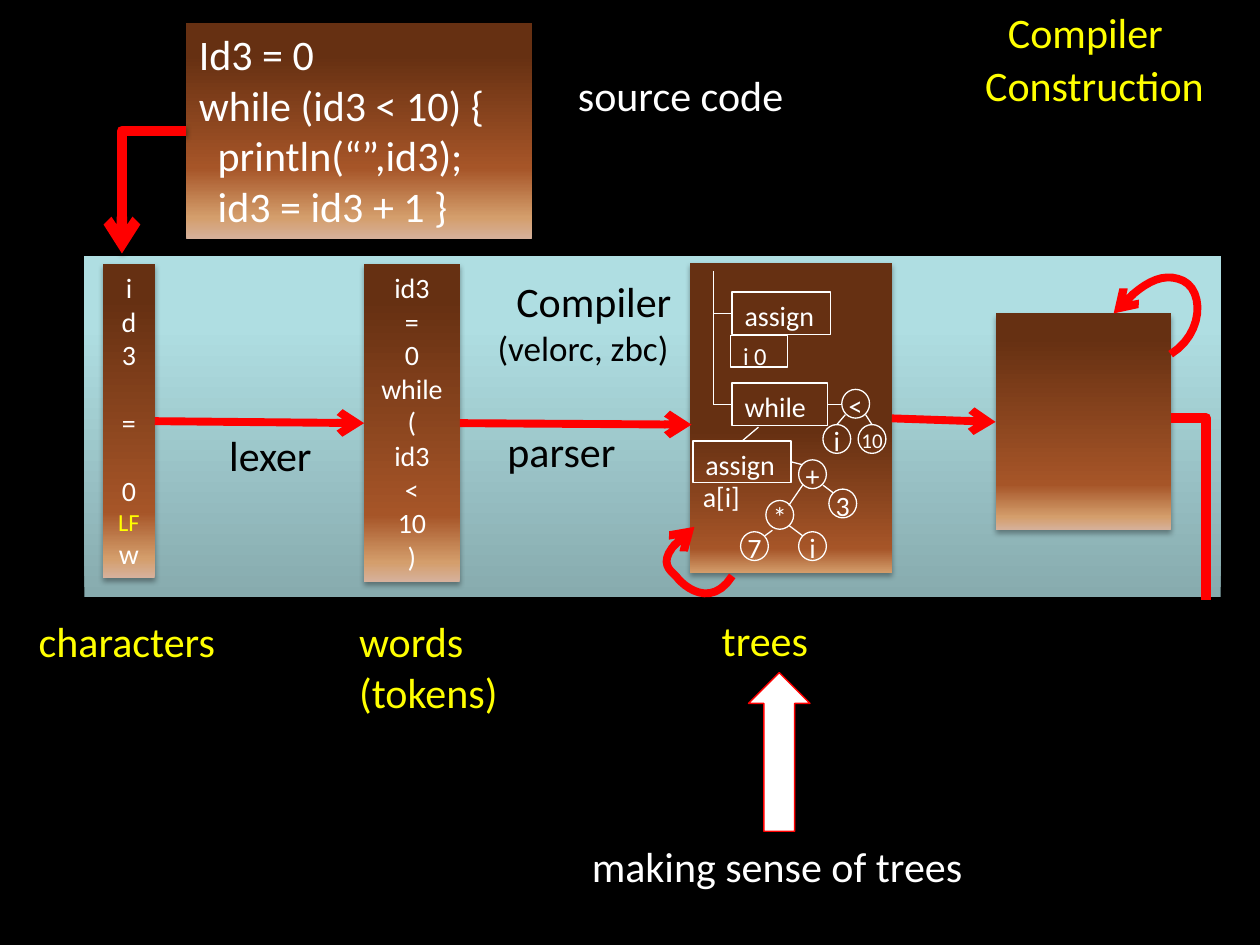
import dataclasses

import lxml.etree
import pptx
import pptx.dml.color
import pptx.enum.shapes
import pptx.enum.text
import pptx.oxml.ns
import pptx.util

Cm = pptx.util.Cm
Pt = pptx.util.Pt
RGB = pptx.dml.color.RGBColor.from_string
qn = pptx.oxml.ns.qn
Preset = pptx.enum.shapes.MSO_SHAPE
Connector = pptx.enum.shapes.MSO_CONNECTOR
Align = pptx.enum.text.PP_ALIGN
Anchor = pptx.enum.text.MSO_ANCHOR


@dataclasses.dataclass(frozen=True)
class Theme:
    font: str = "Calibri"
    black: str = "000000"
    white: str = "FFFFFF"
    yellow: str = "FFFF00"
    red: str = "FF0000"
    brown: tuple = ("D6B19C", "D49E6C", "A65528", "663012")
    teal: tuple = ("87ABAE", "AFDEE2", "AFE0E4")
    title: int = 24
    subtitle: int = 20
    body: int = 16
    small: int = 14
    tiny: int = 12


theme = Theme()
deck = pptx.Presentation()
deck.slide_width, deck.slide_height = Cm(25.4), Cm(19.05)
page = deck.slides.add_slide(deck.slide_layouts[6])
page.background.fill.solid()
page.background.fill.fore_color.rgb = RGB(theme.black)


def draw_box(place, lines=(), size=theme.title, color=theme.white, preset=None,
             stops=(), colors=theme.brown, align=Align.LEFT, indent=(), **formats):
    lengths = [Cm(value) for value in place]
    if preset is None:
        box = page.shapes.add_textbox(*lengths)
    else:
        box = page.shapes.add_shape(preset, *lengths)
        box.fill.background()
        box.line.fill.background()
        box.shadow.inherit = bool(stops)
    if stops:
        box.fill.gradient()
        box.fill.gradient_angle = 90
        stop_list = box._element.spPr.find(qn("a:gradFill")).find(qn("a:gsLst"))
        for old in list(stop_list):
            stop_list.remove(old)
        for position, shade in zip(stops, colors):
            stop = lxml.etree.SubElement(stop_list, qn("a:gs"), pos=str(position * 1000))
            lxml.etree.SubElement(stop, qn("a:srgbClr"), val=shade)
    frame = box.text_frame
    formats = {"word_wrap": True, "vertical_anchor": Anchor.TOP} | formats
    for name, value in formats.items():
        setattr(frame, name, value)
    for index, line in enumerate(lines):
        para = frame.add_paragraph() if index else frame.paragraphs[0]
        para.alignment = align
        if index in indent:
            para._p.get_or_add_pPr().set("marL", str(Cm(0.38)))
        span = para.add_run()
        span.text = line
        for name, value in {"name": theme.font, "size": Pt(size)}.items():
            setattr(span.font, name, value)
        span.font.color.rgb = RGB(color)
    return box


def stroke(path_shape, color=theme.white, width=0.75, arrow=False, shadow=False):
    path_shape.line.color.rgb = RGB(color)
    path_shape.line.width = Pt(width)
    properties = path_shape._element.spPr
    if arrow:
        lxml.etree.SubElement(properties.find(qn("a:ln")), qn("a:tailEnd"), type="arrow")
    if not shadow and properties.find(qn("a:effectLst")) is None:
        lxml.etree.SubElement(properties, qn("a:effectLst"))
    return path_shape


compiler = draw_box((1.7, 5.16, 22.91, 6.88), ["Compiler", "(velorc, zbc)"], color=theme.black,
                    preset=Preset.RECTANGLE, stops=(0, 80, 100), colors=theme.teal, indent=(0,),
                    margin_left=Cm(8.33), margin_top=Cm(0.4))
compiler.text_frame.paragraphs[1].runs[0].font.size = Pt(theme.subtitle)
draw_box((3.76, 0.46, 6.96, 4.37),
         ["Id3 = 0", "while (id3 < 10) {", "println(“”,id3);", "id3 = id3 + 1 }"],
         preset=Preset.RECTANGLE, stops=(0, 10, 33, 85), indent=(2, 3))

panel = {"preset": Preset.RECTANGLE, "size": theme.body, "align": Align.CENTER,
         "stops": (0, 6, 21, 89)}
characters = draw_box((2.08, 5.33, 1.04, 6.32), ["i", "d", "3", "=", "0", "LF", "w"], **panel)
for index in (3, 4):
    characters.text_frame.paragraphs[index].space_before = Pt(19.5)
line_feed = characters.text_frame.paragraphs[5].runs[0].font
line_feed.size = Pt(theme.small)
line_feed.color.rgb = RGB(theme.yellow)
words = draw_box((7.34, 5.33, 1.93, 6.4),
                 ["id3", "=", "0", "while", "(", "id3", "<", "10", ")"], **panel)
trees = draw_box((13.92, 5.31, 4.06, 6.25), **(panel | {"stops": (0, 0, 8, 46)}))
result = draw_box((20.07, 6.32, 3.53, 4.37), **panel)

for place, lines, color, wrap in [
    ((11.4, 1.27, 4.7, 1.27), ["source code"], theme.white, False),
    ((20.07, 0, 4.57, 1.27), ["Compiler"], theme.yellow, True),
    ((19.61, 1.07, 5.33, 1.27), ["Construction"], theme.yellow, True),
    ((4.37, 8.53, 2.18, 1.27), ["lexer"], theme.black, False),
    ((9.98, 8.46, 2.72, 1.27), ["parser"], theme.black, False),
    ((0.53, 12.29, 4.11, 1.27), ["characters"], theme.yellow, False),
    ((6.99, 12.29, 3.33, 2.31), ["words", "(tokens)"], theme.yellow, False),
    ((14.3, 12.27, 2.29, 1.27), ["trees"], theme.yellow, False),
    ((11.68, 16.81, 8.05, 1.27), ["making sense of trees"], theme.white, False),
]:
    draw_box(place, lines, color=color, word_wrap=wrap)

statements = []
for place, text, size in [
    ((14.76, 5.89, 1.98, 0.86), "assign", theme.body),
    ((14.76, 7.72, 1.93, 0.86), "while", theme.body),
    ((13.97, 8.89, 1.98, 0.84), "assign", theme.body),
    ((14.73, 6.76, 1.14, 0.64), "i 0", theme.small),
]:
    statements.append(stroke(draw_box(place, [text], size, preset=Preset.RECTANGLE)))
first_assign, loop, second_assign, operands = statements
draw_box((13.92, 9.55, 1.27, 0.94), ["a[i]"], theme.body, word_wrap=False)

for text, x, y, size in [
    ("+", 16.38, 9.56, theme.body), ("*", 15.72, 10.38, theme.body),
    ("3", 16.99, 10.15, theme.body), ("7", 15.21, 11.01, theme.body),
    ("i", 16.38, 11.01, theme.body), ("<", 17.25, 8.14, theme.body),
    ("i", 16.87, 8.85, theme.body), ("10", 17.58, 8.85, theme.tiny),
]:
    stroke(draw_box((x - 0.28, y - 0.29, 0.56, 0.58), preset=Preset.OVAL))
    draw_box((x - 0.4, y - 0.44, 0.8, 0.94), [text], size, align=Align.CENTER,
             margin_left=0, margin_right=0, word_wrap=False, vertical_anchor=Anchor.MIDDLE)

for ends in [
    (14.38, 5.46, 14.38, 8.15), (16.18, 9.78, 15.9, 10.19), (15.57, 10.69, 15.42, 10.8),
    (16.59, 9.78, 16.79, 9.93), (15.9, 10.59, 16.18, 10.8), (17.04, 8.36, 16.87, 8.56),
    (17.45, 8.36, 17.58, 8.56),
]:
    stroke(page.shapes.add_connector(Connector.STRAIGHT, *map(Cm, ends)))

for box, side, x, y in [
    (first_assign, 1, 14.38, 6.32), (loop, 1, 14.38, 8.15), (loop, 3, 16.97, 8.15),
    (second_assign, 0, 15.29, 8.61), (second_assign, 3, 16.18, 9.37),
]:
    branch = page.shapes.add_connector(Connector.STRAIGHT, *map(Cm, (x, y, x, y)))
    branch.begin_connect(box, side)
    stroke(branch)

for source, target, ends in [
    (characters, words, (3.12, 8.5, 7.34, 8.5)),
    (words, None, (9.27, 8.53, 13.94, 8.56)),
    (trees, result, (17.98, 8.43, 20.07, 8.5)),
]:
    stage = page.shapes.add_connector(Connector.STRAIGHT, *map(Cm, ends))
    stage.begin_connect(source, 3)
    if target is not None:
        stage.end_connect(target, 1)
    stroke(stage, theme.red, 4.5, arrow=True)

for ends, arrow in [((3.76, 2.64, 2.46, 5.11), True), ((23.6, 8.43, 24.31, 12.09), False)]:
    bend = page.shapes.add_connector(Connector.ELBOW, *map(Cm, ends))
    bend._element.spPr.find(qn("a:prstGeom")).set("prst", "bentConnector2")
    stroke(bend, theme.red, 6, arrow=arrow, shadow=arrow)

for knots in [
    [(23.6, 7.14), (24.26, 6.73), (24.28, 5.87), (23.85, 5.66),
     (23.42, 5.46), (22.99, 5.72), (22.45, 6.32)],
    [(14.76, 11.61), (14.33, 12.29), (13.77, 11.81), (13.64, 11.63),
     (13.51, 11.48), (13.11, 11.3), (14.0, 10.62)],
]:
    points = []
    for first in (0, 3):
        for step in range(1, 13):
            t = step / 12
            weights = ((1 - t) ** 3, 3 * t * (1 - t) ** 2, 3 * t ** 2 * (1 - t), t ** 3)
            points.append(tuple(
                Cm(sum(weight * knot[axis] for weight, knot in zip(weights, knots[first:first + 4])))
                for axis in (0, 1)))
    builder = page.shapes.build_freeform(Cm(knots[0][0]), Cm(knots[0][1]))
    builder.add_line_segments(points, close=False)
    loop_arrow = builder.convert_to_shape()
    loop_arrow.fill.background()
    stroke(loop_arrow, theme.red, 4.5, arrow=True)

pointer = draw_box((15.09, 13.56, 1.24, 3.2), preset=Preset.UP_ARROW)
pointer.fill.solid()
pointer.fill.fore_color.rgb = RGB(theme.white)
stroke(pointer, theme.red)

deck.save("out.pptx")
